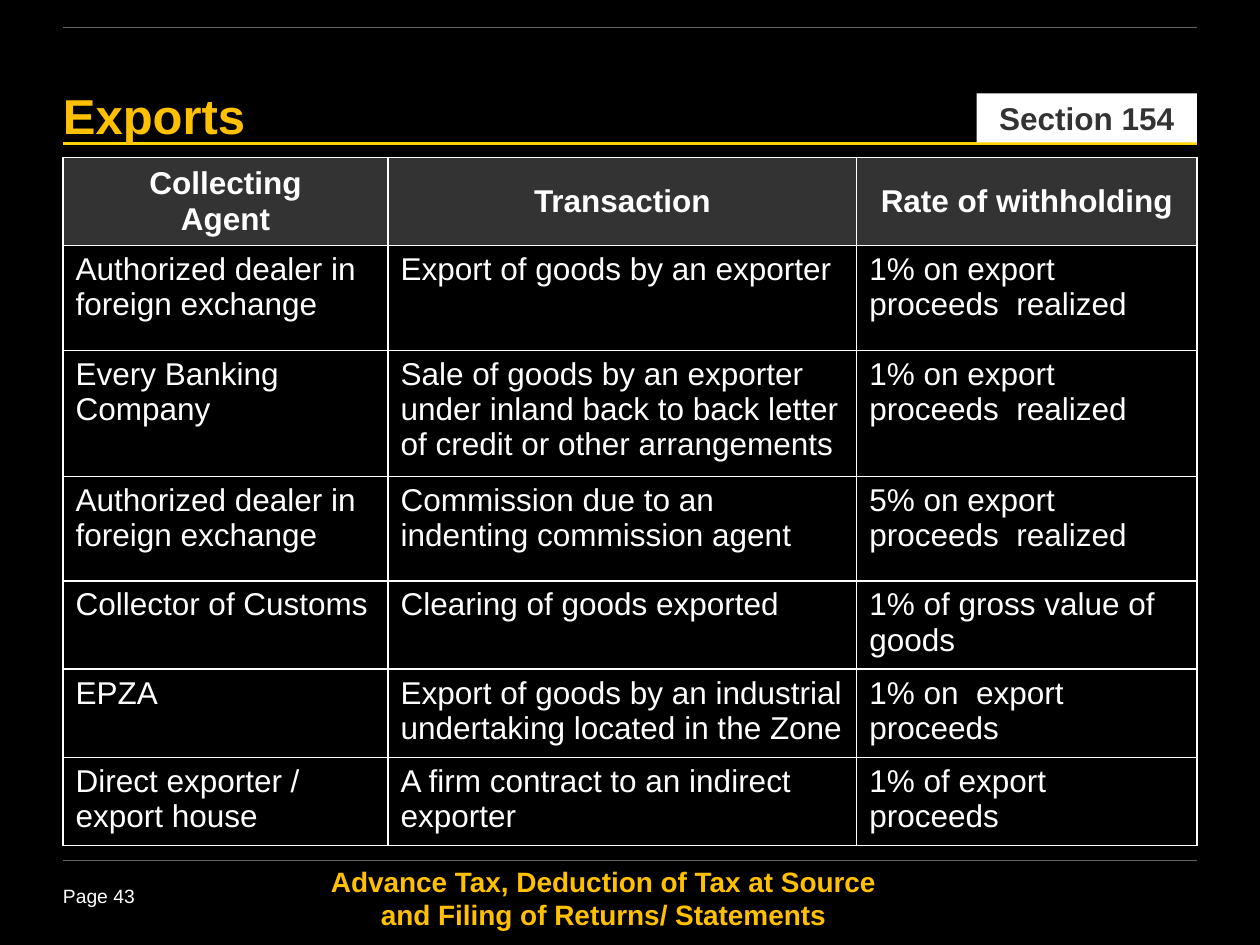
from lxml.etree import SubElement
from pptx import Presentation
from pptx.dml.color import RGBColor
from pptx.enum.shapes import MSO_CONNECTOR, MSO_SHAPE
from pptx.enum.text import MSO_ANCHOR, PP_ALIGN
from pptx.oxml.ns import qn
from pptx.util import Inches, Pt

COLORS = {
    "background": "000000",
    "accent": "FFC000",
    "rule": "FFD200",
    "thin_rule": "646464",
    "light": "FFFFFF",
    "dark": "333333",
}
LEFT, RIGHT = 0.5, 9.5
COLUMN_WIDTHS = [2.58, 3.72, 2.7]
ROW_HEIGHTS = [0.67, 0.83, 0.75, 0.83, 0.58, 0.7, 0.67]
WITHHOLDING = [
    ("Collecting\nAgent", "Transaction", "Rate of withholding"),
    ("Authorized dealer in foreign exchange", "Export of goods by an exporter",
     "1% on export proceeds  realized"),
    ("Every Banking Company",
     "Sale of goods by an exporter under inland back to back letter of credit or other arrangements",
     "1% on export proceeds  realized"),
    ("Authorized dealer in foreign exchange", "Commission due to an indenting commission agent",
     "5% on export proceeds  realized"),
    ("Collector of Customs", "Clearing of goods exported", "1% of gross value of goods"),
    ("EPZA", "Export of goods by an industrial undertaking located in the Zone",
     "1% on  export proceeds"),
    ("Direct exporter / export house", "A firm contract to an indirect exporter",
     "1% of export proceeds"),
]


def color(name):
    return RGBColor.from_string(COLORS[name])


class SlideBuilder:
    font_name = "Arial"

    def __init__(self, slide):
        self.slide = slide
        self.paint(slide.background.fill, "background")

    def paint(self, fill, name):
        fill.solid()
        fill.fore_color.rgb = color(name)

    def fill_text(self, frame, text, size, ink, bold=False, **paragraph_format):
        frame.text = text
        frame.word_wrap = True
        for paragraph in frame.paragraphs:
            for key, value in paragraph_format.items():
                setattr(paragraph, key, value)
            font_format = {"name": self.font_name, "size": Pt(size), "bold": bold}
            for key, value in font_format.items():
                setattr(paragraph.font, key, value)
            paragraph.font.color.rgb = color(ink)

    def set_margins(self, frame, top):
        margins = {"margin_left": 0, "margin_top": Inches(top), "margin_right": 0, "margin_bottom": 0}
        for key, value in margins.items():
            setattr(frame, key, value)

    def text(self, box, text, size, ink, top_margin=0, **style):
        frame = self.slide.shapes.add_textbox(*map(Inches, box)).text_frame
        self.set_margins(frame, top_margin)
        self.fill_text(frame, text, size, ink, **style)

    def tag(self, box, text, size, **style):
        tag = self.slide.shapes.add_shape(MSO_SHAPE.RECTANGLE, *map(Inches, box))
        tag.shadow.inherit = False
        tag.line.fill.background()
        self.paint(tag.fill, "light")
        self.set_margins(tag.text_frame, 0.04)
        tag.text_frame.vertical_anchor = MSO_ANCHOR.MIDDLE
        self.fill_text(tag.text_frame, text, size, "dark", **style)

    def rule(self, y, ink, width):
        rule = self.slide.shapes.add_connector(
            MSO_CONNECTOR.STRAIGHT, Inches(LEFT), Inches(y), Inches(RIGHT), Inches(y))
        rule.line.color.rgb = color(ink)
        rule.line.width = Pt(width)
        SubElement(rule._element.spPr, qn("a:effectLst"))

    def border(self, cell):
        properties = cell._tc.get_or_add_tcPr()
        for side in ("a:lnL", "a:lnR", "a:lnT", "a:lnB"):
            edge = SubElement(properties, qn(side), w=str(Pt(1)))
            fill = SubElement(edge, qn("a:solidFill"))
            SubElement(fill, qn("a:srgbClr"), val=COLORS["light"])

    def table(self, box, rows):
        table = self.slide.shapes.add_table(
            len(rows), len(COLUMN_WIDTHS), *map(Inches, box)).table
        table.horz_banding = False
        for column, width in zip(table.columns, COLUMN_WIDTHS):
            column.width = Inches(width)
        for row, height in zip(table.rows, ROW_HEIGHTS):
            row.height = Inches(height)
        for index, row in enumerate(rows):
            for cell, text in zip(table.rows[index].cells, row):
                self.border(cell)
                if index == 0:
                    self.paint(cell.fill, "dark")
                    cell.vertical_anchor = MSO_ANCHOR.MIDDLE
                    style = {"bold": True, "alignment": PP_ALIGN.CENTER}
                else:
                    self.paint(cell.fill, "background")
                    style = {"space_after": Pt(2)}
                self.fill_text(cell.text_frame, text, 18, "light", **style)


def main():
    presentation = Presentation()
    presentation.slide_width = Inches(10)
    presentation.slide_height = Inches(7.5)
    builder = SlideBuilder(presentation.slides.add_slide(presentation.slide_layouts[6]))
    builder.text((2.5, 6.86, 4.58, 0.52),
                 "Advance Tax, Deduction of Tax at Source and Filing of Returns/ Statements",
                 16, "accent", bold=True, alignment=PP_ALIGN.CENTER)
    builder.text((LEFT, 7.02, 0.73, 0.22), "Page 43", 11, "light")
    builder.rule(1.14, "rule", 1.5)
    builder.rule(6.83, "thin_rule", 0.25)
    builder.rule(0.22, "thin_rule", 0.5)
    builder.tag((7.75, 0.74, 1.75, 0.39), "Section 154", 18, bold=True,
                alignment=PP_ALIGN.CENTER, line_spacing=0.85)
    builder.text((LEFT, 0.71, 7.17, 0.42), "Exports", 28, "accent", top_margin=0.04,
                 bold=True, line_spacing=0.85)
    builder.table((LEFT, 1.25, RIGHT - LEFT, sum(ROW_HEIGHTS)), WITHHOLDING)
    presentation.save("out.pptx")


if __name__ == "__main__":
    main()
